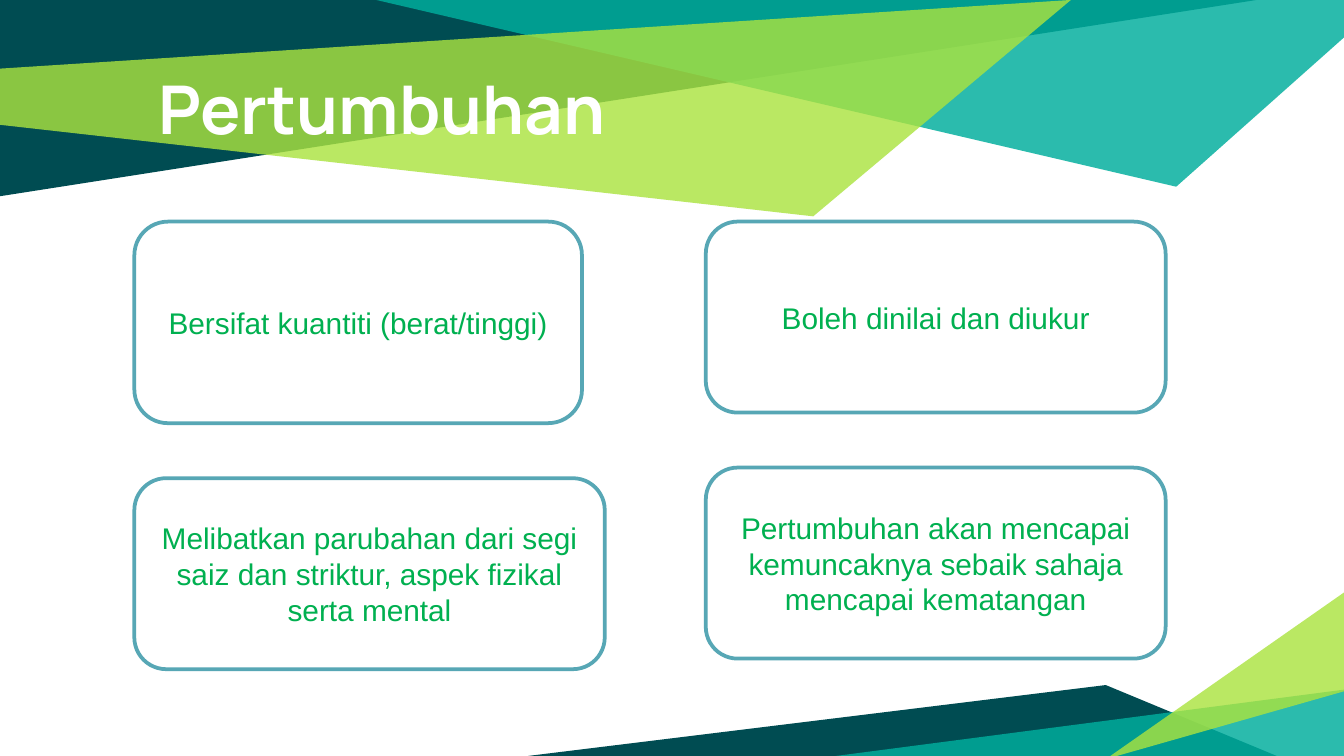
from lxml import etree
from pptx import Presentation
from pptx import util as u
from pptx.dml import color
from pptx.enum import shapes, text
from pptx.oxml import ns

DARK, TEAL, LIME = "004C52", "00AE9D", "ABE33F"
WHITE, BORDER, GREEN = "FFFFFF", "57A7B5", "00B050"

RIBBONS = [
    (DARK, 100, [(0, 0), (0, 3.71), (23.75, 0)]),
    (TEAL, 83, [(7.11, 0), (22.23, 3.53), (25.4, 0.71), (25.4, 0)]),
    (LIME, 81, [(-0.03, 1.3), (0, 2.36), (15.37, 4.09), (20.24, 0)]),
    (DARK, 100, [(9.98, 14.29), (24.13, 14.29), (20.9, 12.95)]),
    (TEAL, 83, [(25.45, 13.03), (25.45, 14.35), (15.34, 14.35)]),
    (LIME, 81, [(25.43, 13.06), (25.43, 11.18), (20.9, 14.35)]),
]

CARDS_TOP, CARD_GAP = 4.19, 1.04
COLUMNS = [
    (2.54, [
        (8.46, 3.81, "Bersifat kuantiti (berat/tinggi)"),
        (8.89, 3.61, "Melibatkan parubahan dari segi saiz dan striktur, aspek fizikal serta mental"),
    ]),
    (13.34, [
        (8.69, 3.61, "Boleh dinilai dan diukur"),
        (8.69, 3.61, "Pertumbuhan akan mencapai kemuncaknya sebaik sahaja mencapai kematangan"),
    ]),
]


def rgb(code):
    return color.RGBColor.from_string(code)


class GrowthSlide:
    """Holds the style and the current slide, and draws each kind of element."""

    title_font, title_size = "Manrope", 36
    body_font, body_size = "Arial", 16
    border_width = 2

    def __init__(self, slide):
        self.slide = slide

    def paint(self, shape, fill, opacity=100):
        shape.shadow.inherit = False
        shape.fill.solid()
        shape.fill.fore_color.rgb = rgb(fill)
        if opacity < 100:
            tint = shape.element.spPr.find(".//" + ns.qn("a:srgbClr"))
            etree.SubElement(tint, ns.qn("a:alpha"), val=str(opacity * 1000))

    def add_words(self, paragraph, words, font, size, ink, bold=False):
        run = paragraph.add_run()
        run.text = words
        run.font.name = font
        run.font.size = u.Pt(size)
        run.font.bold = bold
        run.font.color.rgb = rgb(ink)

    def ribbon(self, fill, opacity, corners):
        start, *rest = [(u.Cm(x), u.Cm(y)) for x, y in corners]
        outline = self.slide.shapes.build_freeform(*start)
        outline.add_line_segments(rest, close=True)
        band = outline.convert_to_shape()
        self.paint(band, fill, opacity)
        band.line.fill.background()

    def title(self, left, top, width, height, words):
        heading = self.slide.shapes.add_textbox(u.Cm(left), u.Cm(top), u.Cm(width), u.Cm(height))
        frame = heading.text_frame
        frame.word_wrap = True
        frame.vertical_anchor = text.MSO_ANCHOR.TOP
        frame.margin_left = frame.margin_right = u.Cm(0.25)
        frame.margin_top = frame.margin_bottom = u.Cm(0.25)
        self.add_words(frame.paragraphs[0], words, self.title_font, self.title_size, WHITE, True)

    def card(self, left, top, width, height, words):
        card = self.slide.shapes.add_shape(
            shapes.MSO_SHAPE.ROUNDED_RECTANGLE, u.Cm(left), u.Cm(top), u.Cm(width), u.Cm(height))
        self.paint(card, WHITE)
        card.line.color.rgb = rgb(BORDER)
        card.line.width = u.Pt(self.border_width)
        frame = card.text_frame
        frame.word_wrap = True
        frame.vertical_anchor = text.MSO_ANCHOR.MIDDLE
        statement = frame.paragraphs[0]
        statement.alignment = text.PP_ALIGN.CENTER
        self.add_words(statement, words, self.body_font, self.body_size, GREEN)


def main():
    deck = Presentation()
    deck.slide_width, deck.slide_height = u.Cm(25.4), u.Cm(14.29)
    growth = GrowthSlide(deck.slides.add_slide(deck.slide_layouts[6]))
    for fill, opacity, corners in RIBBONS:
        growth.ribbon(fill, opacity, corners)
    growth.title(2.74, 1.02, 20.47, 2.39, "Pertumbuhan")
    for left, cards in COLUMNS:
        top = CARDS_TOP
        for width, height, words in cards:
            growth.card(left, top, width, height, words)
            top += height + CARD_GAP
    deck.save("out.pptx")


if __name__ == "__main__":
    main()
